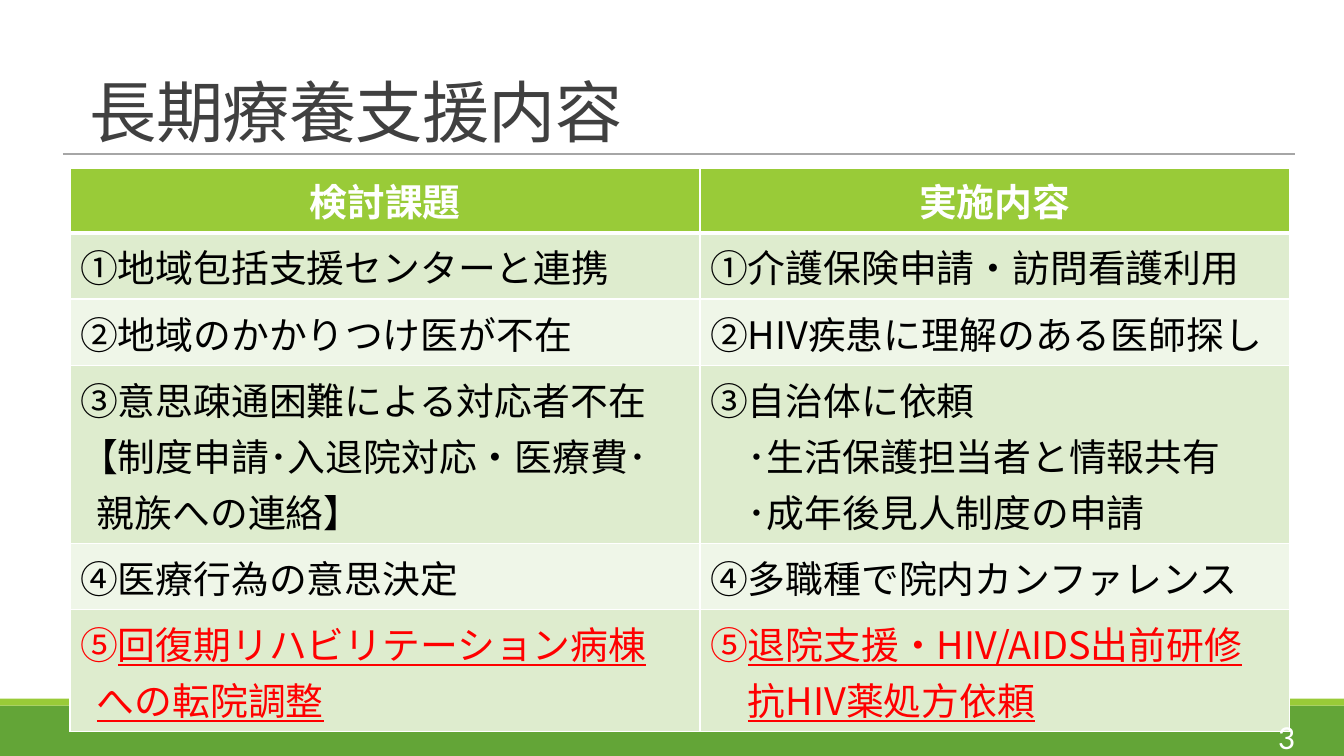
from lxml import etree
from pptx import Presentation
from pptx.dml.color import RGBColor
from pptx.enum import shapes, text
from pptx.oxml import ns
from pptx.util import Pt

FONT = "Noto Sans CJK JP"


def rgb(value):
    return RGBColor.from_string(value)


def add_run(p, content, color, **formats):
    """Add a run whose Latin and East Asian text share one font."""
    r = p.add_run()
    r.text = content
    r.font.color.rgb = rgb(color)
    for name, value in {"name": FONT, **formats}.items():
        setattr(r.font, name, value)
    ea = etree.SubElement(r.font._element, ns.qn("a:ea"))
    ea.set("typeface", r.font.name)
    return r


prs = Presentation()
prs.slide_width, prs.slide_height = Pt(960), Pt(540)
s = prs.slides.add_slide(prs.slide_layouts[5])

# Footer bands
for top, height, color in [(504, 36, "63A537"), (499, 5, "99CB38")]:
    sp = s.shapes.add_shape(shapes.MSO_SHAPE.RECTANGLE, 0, Pt(top), Pt(960), Pt(height))
    sp.shadow.inherit = False
    sp.fill.solid()
    sp.fill.fore_color.rgb = rgb(color)
    sp.line.fill.background()

# Title and rule
title = s.shapes.title
title.left, title.top, title.width, title.height = Pt(57), Pt(40), Pt(792), Pt(71.5)
tf = title.text_frame
tf.vertical_anchor = text.MSO_ANCHOR.BOTTOM
tf.auto_size = text.MSO_AUTO_SIZE.NONE
p = tf.paragraphs[0]
p.alignment = text.PP_ALIGN.LEFT
p.line_spacing = 0.85
r = add_run(p, "長期療養支援内容", "404040", size=Pt(48))
r.font._element.set("spc", "-50")

rule = s.shapes.add_connector(shapes.MSO_CONNECTOR.STRAIGHT, Pt(45), Pt(110), Pt(925), Pt(110))
rule.line.color.rgb = rgb("A6A6A6")
rule.line.width = Pt(1)
etree.SubElement(rule._element.spPr, ns.qn("a:effectLst"))

# Table: each cell is a list of (indent, text) lines
rows = [
    (46, [(0, "検討課題")], [(0, "実施内容")]),
    (47, [(0, "①地域包括支援センターと連携")], [(0, "①介護保険申請・訪問看護利用")]),
    (47, [(0, "②地域のかかりつけ医が不在")], [(0, "②HIV疾患に理解のある医師探し")]),
    (127,
     [(0, "③意思疎通困難による対応者不在"), (0, "【制度申請･入退院対応・医療費･"),
      (12, "親族への連絡】")],
     [(0, "③自治体に依頼"), (27, "･生活保護担当者と情報共有"), (27, "･成年後見人制度の申請")]),
    (47, [(0, "④医療行為の意思決定")], [(0, "④多職種で院内カンファレンス")]),
    (87,
     [(0, "⑤回復期リハビリテーション病棟"), (12, "への転院調整")],
     [(0, "⑤退院支援・HIV/AIDS出前研修"), (27, "抗HIV薬処方依頼")]),
]
table = s.shapes.add_table(len(rows), 2, Pt(50), Pt(120), Pt(871), Pt(401)).table
table.columns[0].width, table.columns[1].width = Pt(450), Pt(421)

for i, (height, *cells) in enumerate(rows):
    table.rows[i].height = Pt(height)
    header, last = i == 0, i == len(rows) - 1
    color = "FFFFFF" if header else "FF0000" if last else "000000"
    fill = "99CB38" if header else "DEECCE" if i % 2 else "EFF6E8"
    for j, lines in enumerate(cells):
        cell = table.cell(i, j)
        tcPr = cell._tc.get_or_add_tcPr()
        for side in "LRTB":
            thick = (header and side == "B") or (i == 1 and side == "T")
            ln = etree.SubElement(tcPr, ns.qn(f"a:ln{side}"), w=str(Pt(3 if thick else 1)))
            solid = etree.SubElement(ln, ns.qn("a:solidFill"))
            etree.SubElement(solid, ns.qn("a:srgbClr"), val="FFFFFF")
        cell.fill.solid()
        cell.fill.fore_color.rgb = rgb(fill)
        for k, (indent, content) in enumerate(lines):
            p = cell.text_frame.paragraphs[0] if k == 0 else cell.text_frame.add_paragraph()
            p._p.get_or_add_pPr().set("marL", str(Pt(indent)))
            if header:
                p.alignment = text.PP_ALIGN.CENTER
            else:
                p.line_spacing = Pt(40)
            formats = {"size": Pt(27), "bold": header}
            if last and content.startswith("⑤"):
                add_run(p, "⑤", color, **formats)
                content = content[1:]
            add_run(p, content, color, underline=last, **formats)

# Slide number
number = s.shapes.add_textbox(Pt(829), Pt(511), Pt(103), Pt(29))
tf = number.text_frame
tf.word_wrap = True
tf.vertical_anchor = text.MSO_ANCHOR.MIDDLE
p = tf.paragraphs[0]
p.alignment = text.PP_ALIGN.RIGHT
add_run(p, "3", "FFFFFF", name="Calibri", size=Pt(24))

prs.save("out.pptx")
